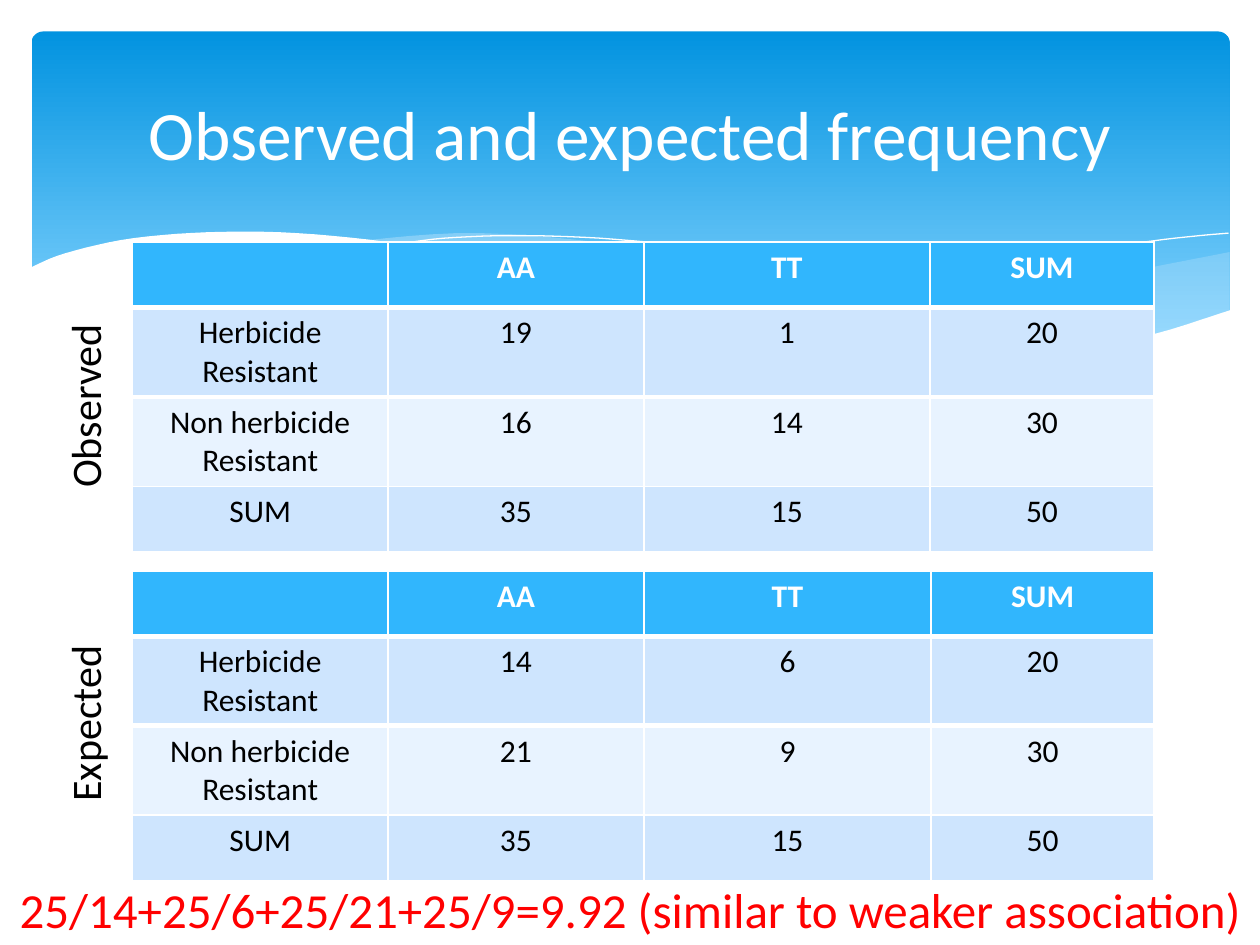
from lxml import etree
from pptx import Presentation
from pptx.dml.color import RGBColor
from pptx.enum.shapes import MSO_SHAPE
from pptx.enum.text import MSO_ANCHOR, PP_ALIGN
from pptx.oxml.ns import qn
from pptx.util import Inches, Pt

ROUNDED = MSO_SHAPE.ROUNDED_RECTANGLE
CENTER, LEFT = PP_ALIGN.CENTER, PP_ALIGN.LEFT
MIDDLE = MSO_ANCHOR.MIDDLE
FONT = "Calibri"
WHITE, BLACK, RED = "FFFFFF", "000000", "FF0000"
HEADER_BLUE, BAND_DARK, BAND_LIGHT = "31B6FD", "CEE5FE", "E8F3FF"
WAVE_BLUE = "C6E7FC"
BANNER_STOPS = [(0, "0293E0"), (0.9, "83D3FE")]

TITLE = "Observed and expected frequency"
CHI_SQUARE = "25/14+25/6+25/21+25/9=9.92 (similar to weaker association)"
HEADER = ["", "AA", "TT", "SUM"]
ROW_LABELS = ["Herbicide Resistant", "Non herbicide\nResistant", "SUM"]
TABLES = [
    {"label": "Observed", "label_top": 2.88, "top": 1.92,
     "widths": [2.03, 2.03, 2.27, 1.78],
     "counts": [[19, 1, 20], [16, 14, 30], [35, 15, 50]]},
    {"label": "Expected", "label_top": 5.37, "top": 4.53,
     "widths": [2.03, 2.03, 2.28, 1.77],
     "counts": [[14, 6, 20], [21, 9, 30], [35, 15, 50]]},
]
ROW_HEIGHTS = [0.52, 0.71, 0.71, 0.52]
TABLE_LEFT = 1.05

# Each wave is a list of edges; each edge is a smooth curve through its knots.
RIGHT_WAVE = [
    [(9.76, 2), (8.61, 2.23), (7.53, 2.48), (6.61, 2.65)],
    [(6.61, 2.65), (7.45, 2.75), (8.24, 2.77), (8.97, 2.7), (9.76, 2.47)],
]
MIDDLE_WAVE = [
    [(8.93, 2.73), (7.75, 2.54), (6.29, 2.22), (5.02, 1.96), (3.8, 1.85), (2.86, 1.91)],
    [(2.86, 1.91), (4.04, 2.11), (5.3, 2.4), (6.5, 2.64), (7.73, 2.77), (8.93, 2.73)],
]
WHITE_WAVE = [
    [(9.77, 2.46), (8.99, 2.69), (8.09, 2.77), (7.08, 2.7), (5.79, 2.5), (4.47, 2.2),
     (3.4, 1.97), (2.5, 1.86), (1.77, 1.84), (1.06, 1.89), (0.52, 2.01), (0.23, 2.13)],
    [(0.23, 3.29), (9.77, 3.29)],
]
LEFT_CREST = [(3.09, 1.95), (3.53, 1.89), (4.16, 1.87), (4.89, 1.9), (5.82, 2),
              (6.95, 2.19), (7.95, 2.41), (9.07, 2.72)]
RIGHT_CREST = [(6.13, 2.57), (6.95, 2.35), (7.76, 2.16), (8.66, 1.99), (9.24, 1.9),
               (9.75, 1.85)]
CURVE_STEPS = 6
UNITS_PER_INCH = 1000  # freeform points are whole numbers


def color(hex_value):
    return RGBColor.from_string(hex_value)


def smooth(knots):
    """Return points of a Catmull-Rom curve that passes through the knots."""
    padded = [knots[0], *knots, knots[-1]]
    points = [knots[0]]
    for segment in zip(padded, padded[1:], padded[2:], padded[3:]):
        for step in range(1, CURVE_STEPS + 1):
            t = step / CURVE_STEPS
            points.append(tuple(
                b + t * (c - a) / 2
                + t ** 2 * (2 * a - 5 * b + 4 * c - d) / 2
                + t ** 3 * (3 * b - a - 3 * c + d) / 2
                for a, b, c, d in zip(*segment)))
    return points


def add_outline(slide, edges, closed):
    points = [(x * UNITS_PER_INCH, y * UNITS_PER_INCH)
              for edge in edges for x, y in smooth(edge)]
    builder = slide.shapes.build_freeform(*points[0], scale=Inches(1) / UNITS_PER_INCH)
    builder.add_line_segments(points[1:], close=closed)
    outline = builder.convert_to_shape()
    outline.shadow.inherit = False
    return outline


def add_wave(slide, edges, hex_value, opacity):
    wave = add_outline(slide, edges, closed=True)
    wave.line.fill.background()
    wave.fill.solid()
    wave.fill.fore_color.rgb = color(hex_value)
    rgb = wave.element.spPr.find(qn("a:solidFill")).find(qn("a:srgbClr"))
    etree.SubElement(rgb, qn("a:alpha"), val=str(opacity * 1000))


def add_crest(slide, knots):
    crest = add_outline(slide, [knots], closed=False)
    crest.fill.background()
    crest.line.color.rgb = color(WHITE)
    crest.line.width = Pt(0)


def add_banner(slide):
    banner = slide.shapes.add_shape(ROUNDED, *map(Inches, (0.25, 0.25, 9.51, 2.7)))
    banner.adjustments[0] = 0.034
    banner.shadow.inherit = False
    banner.line.fill.background()
    banner.fill.gradient()
    banner.fill.gradient_angle = 270
    for stop, (position, hex_value) in zip(banner.fill.gradient_stops, BANNER_STOPS):
        stop.position = position
        stop.color.rgb = color(hex_value)

    add_wave(slide, RIGHT_WAVE, WAVE_BLUE, 29)
    add_wave(slide, MIDDLE_WAVE, WAVE_BLUE, 40)
    for crest in (LEFT_CREST, RIGHT_CREST):
        add_crest(slide, crest)
    add_wave(slide, WHITE_WAVE, WHITE, 100)


def format_text(frame, size, hex_value, align=CENTER, bold=False):
    for paragraph in frame.paragraphs:
        paragraph.alignment = align
        paragraph.font.name = FONT
        paragraph.font.size = Pt(size)
        paragraph.font.bold = bold
        paragraph.font.color.rgb = color(hex_value)


def add_title(slide):
    title = slide.shapes.title
    title.left, title.top, title.width, title.height = map(Inches, (0.5, 0.37, 9, 1.37))
    title.text_frame.text = TITLE
    title.text_frame.vertical_anchor = MIDDLE
    format_text(title.text_frame, 39.6, WHITE)
    slide.shapes.element.append(title.element)  # bring in front of the banner


def add_text(slide, text, box, size, hex_value, align):
    textbox = slide.shapes.add_textbox(*map(Inches, box))
    textbox.text_frame.word_wrap = True
    textbox.text_frame.text = text
    format_text(textbox.text_frame, size, hex_value, align)
    return textbox


def add_border(cell, side, points):
    properties = cell._tc.get_or_add_tcPr()
    border = etree.Element(qn(f"a:{side}"), w=str(Pt(points)))
    fill = etree.SubElement(border, qn("a:solidFill"))
    etree.SubElement(fill, qn("a:srgbClr"), val=WHITE)
    properties.insert(0, border)  # borders come before the cell fill


def add_frequency_table(slide, top, widths, counts):
    rows = [HEADER] + [[label, *row] for label, row in zip(ROW_LABELS, counts)]
    table = slide.shapes.add_table(
        len(rows), len(HEADER), Inches(TABLE_LEFT), Inches(top),
        Inches(sum(widths)), Inches(sum(ROW_HEIGHTS))).table
    for column, width in zip(table.columns, widths):
        column.width = Inches(width)
    for r, (values, height) in enumerate(zip(rows, ROW_HEIGHTS)):
        table.rows[r].height = Inches(height)
        is_header = r == 0
        band = HEADER_BLUE if is_header else BAND_DARK if r % 2 else BAND_LIGHT
        for cell, value in zip(table.rows[r].cells, values):
            cell.text = str(value)
            cell.fill.solid()
            cell.fill.fore_color.rgb = color(band)
            format_text(cell.text_frame, 18, WHITE if is_header else BLACK,
                        bold=is_header)
            if r < 2:  # thick rule between the header and the first row
                add_border(cell, "lnB" if is_header else "lnT", 3)


def main():
    prs = Presentation()
    prs.slide_width, prs.slide_height = Inches(10), Inches(7.5)
    slide = prs.slides.add_slide(prs.slide_layouts[5])
    add_banner(slide)
    add_title(slide)
    for table in TABLES:
        add_frequency_table(slide, table["top"], table["widths"], table["counts"])
        side_label = add_text(slide, table["label"], (-0.17, table["label_top"], 1.68, 0.5),
                              24, BLACK, LEFT)
        side_label.rotation = 270
    add_text(slide, CHI_SQUARE, (0, 6.93, 10, 0.57), 28, RED, CENTER)
    prs.save("out.pptx")


if __name__ == "__main__":
    main()
